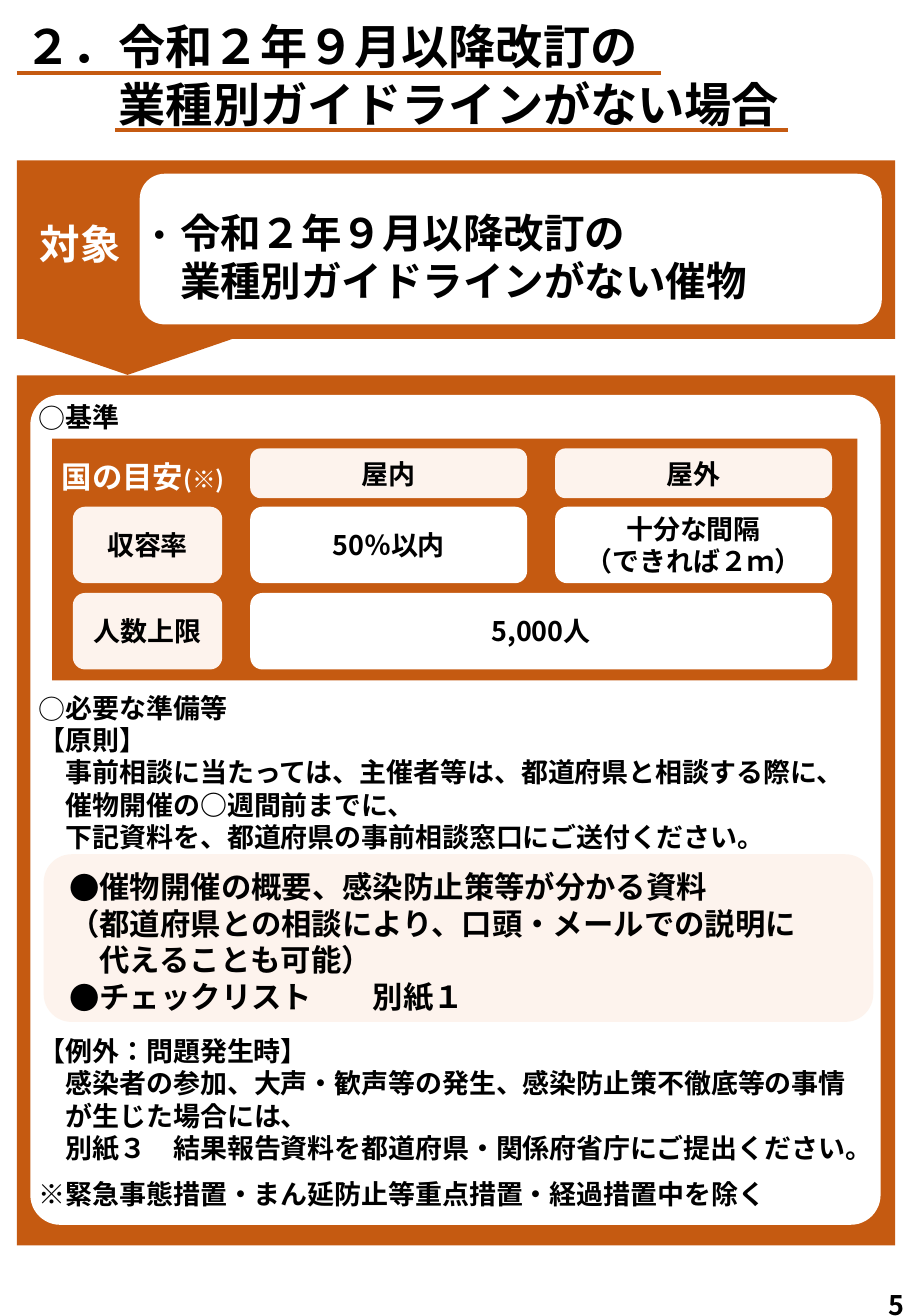
from typing import NamedTuple

from lxml.etree import SubElement
from pptx import Presentation
from pptx.dml.color import RGBColor
from pptx.enum.lang import MSO_LANGUAGE_ID
from pptx.enum.shapes import MSO_CONNECTOR, MSO_SHAPE
from pptx.enum.text import MSO_ANCHOR, MSO_AUTO_SIZE, PP_ALIGN
from pptx.oxml.ns import qn
from pptx.util import Pt

SCALE = 9144  # EMU in one px, 100 px to the inch
FONT = "Noto Sans CJK JP"
ORANGE, CREAM, WHITE, BLACK = "C55A11", "FDF3ED", "FFFFFF", "000000"
PITCH = {14: 19, 16: 19.1, 18: 21.7, 24: 28.4, 28: 34.4}


class Line(NamedTuple):
    """One paragraph; indent counts characters, gap is points above."""
    text: str
    size: int = 16
    indent: int = 0
    gap: int = 0
    mark: str = ""
    tab: int = 0


def px(num):
    return int(num * SCALE)


def color(code):
    return RGBColor.from_string(code)


def style(run, size, ink):
    font = run.font
    font.size, font.bold, font.name = Pt(size), True, FONT
    font.language_id = MSO_LANGUAGE_ID.JAPANESE
    font.color.rgb = color(ink)
    SubElement(font._element, qn("a:ea")).set("typeface", FONT)


def write(shape, lines, ink=BLACK, align=PP_ALIGN.LEFT,
          anchor=MSO_ANCHOR.TOP, pad=(10, 5)):
    frame = shape.text_frame
    frame.text = "\n".join(line.text for line in lines)
    frame.word_wrap, frame.auto_size = True, MSO_AUTO_SIZE.NONE
    frame.vertical_anchor = anchor
    frame.margin_left = frame.margin_right = px(pad[0])
    frame.margin_top = frame.margin_bottom = px(pad[1])
    for para, line in zip(frame.paragraphs, lines):
        para.alignment = align
        para.line_spacing = Pt(PITCH[line.size])
        para.space_before, para.space_after = Pt(line.gap), Pt(0)
        hang = 1 if line.mark else 0
        props = para._p.get_or_add_pPr()
        props.set("marL", str(Pt(line.size * (line.indent + hang))))
        props.set("indent", str(-Pt(line.size * hang)))
        if line.mark:
            SubElement(props, qn("a:buFont")).set("typeface", FONT)
            SubElement(props, qn("a:buChar")).set("char", line.mark)
        else:
            SubElement(props, qn("a:buNone"))
        if line.tab:
            stop = SubElement(SubElement(props, qn("a:tabLst")), qn("a:tab"))
            stop.set("pos", str(px(line.tab)))
            stop.set("algn", "l")
        for run in para.runs:
            style(run, line.size, ink)


def block(slide, kind, box, fill, curve=None):
    shape = slide.shapes.add_shape(kind, *map(px, box))
    shape.shadow.inherit = False
    shape.fill.solid()
    shape.fill.fore_color.rgb = color(fill)
    shape.line.fill.background()
    if curve is not None:
        shape.adjustments[0] = curve
    return shape


def label(slide, box, lines, ink=BLACK):
    shape = slide.shapes.add_textbox(*map(px, box))
    write(shape, lines, ink)
    return shape


def place(holder, box):
    """Move a placeholder to its box and to the front."""
    holder.left, holder.top, holder.width, holder.height = map(px, box)
    holder.element.getparent().append(holder.element)


def rule(slide, left, right, top):
    line = slide.shapes.add_connector(
        MSO_CONNECTOR.STRAIGHT, px(left), px(top), px(right), px(top))
    line.line.color.rgb = color(ORANGE)
    line.line.width = Pt(2.25)
    SubElement(line._element.spPr, qn("a:effectLst"))


def head(slide, box):
    x, y, _, _ = box
    place(slide.shapes.title, box)
    write(slide.shapes.title, [
        Line("２．令和２年９月以降改訂の", 28),
        Line("業種別ガイドラインがない場合", 28, indent=2)])
    rule(slide, x + 4, x + 534, y + 52)
    rule(slide, x + 85, x + 639, y + 99)


def target(slide, box):
    x, y, wide, high = box
    arrow = block(slide, MSO_SHAPE.PENTAGON, (x + 60, y + 55, 62, 181), ORANGE)
    arrow.rotation = 90
    block(slide, MSO_SHAPE.RECTANGLE, box, ORANGE)
    block(slide, MSO_SHAPE.ROUNDED_RECTANGLE,
          (x + 101, y + 11, wide - 112, high - 23), WHITE)
    label(slide, (x + 9, y + 44, 119, 50), [Line("対象", 24)], WHITE)
    label(slide, (x + 91, y + 35, 622, 91), [
        Line("令和２年９月以降改訂の", 24, mark="・"),
        Line("業種別ガイドラインがない催物", 24, indent=1)])


def panel(slide, box):
    x, y, wide, high = box
    block(slide, MSO_SHAPE.RECTANGLE, box, ORANGE)
    block(slide, MSO_SHAPE.ROUNDED_RECTANGLE,
          (x + 11, y + 16, wide - 23, high - 33), WHITE, 0.036)
    block(slide, MSO_SHAPE.ROUNDED_RECTANGLE,
          (x + 22, y + 394, 683, 138), CREAM)
    body = slide.placeholders[1]
    place(body, (x + 8, y + 16, 728, 683))
    write(body, [
        Line("基準", mark="○"),
        Line("必要な準備等", gap=153, mark="○"),
        Line("【原則】"),
        Line("事前相談に当たっては、主催者等は、都道府県と相談する際に、", indent=1),
        Line("催物開催の○週間前までに、", indent=1),
        Line("下記資料を、都道府県の事前相談窓口にご送付ください。", indent=1),
        Line("催物開催の概要、感染防止策等が分かる資料", 18, 1, 9, "●"),
        Line("（都道府県との相談により、口頭・メールでの説明に", 18, 1),
        Line("代えることも可能）", 18, 2),
        Line("チェックリスト\t別紙１", 18, 1, 0, "●", 275),
        Line("【例外：問題発生時】", gap=12),
        Line("感染者の参加、大声・歓声等の発生、感染防止策不徹底等の事情", indent=1),
        Line("が生じた場合には、", indent=1),
        Line("別紙３　結果報告資料を都道府県・関係府省庁にご提出ください。", indent=1),
        Line("※緊急事態措置・まん延防止等重点措置・経過措置中を除く", gap=8)])


def limits(slide, box):
    x, y, _, _ = box
    block(slide, MSO_SHAPE.RECTANGLE, box, ORANGE)
    cols = [(17, 123), (163, 228), (414, 228)]
    rows = [(8, 41), (56, 63), (127, 63)]
    cells = [  # row, first column, last column, words
        (0, 1, 1, "屋内"), (0, 2, 2, "屋外"),
        (1, 0, 0, "収容率"), (1, 1, 1, "50％以内"),
        (1, 2, 2, "十分な間隔\n（できれば２ｍ）"),
        (2, 0, 0, "人数上限"), (2, 1, 2, "5,000人")]
    for row, first, last, words in cells:
        left, (top, high) = cols[first][0], rows[row]
        wide = sum(cols[last]) - left
        fill = CREAM if row == 0 or first == 0 else WHITE
        cell = block(slide, MSO_SHAPE.ROUNDED_RECTANGLE,
                     (x + left, y + top, wide, high), fill,
                     0.21 if row == 0 else 0.16)
        write(cell, [Line(text) for text in words.split("\n")],
              align=PP_ALIGN.CENTER, anchor=MSO_ANCHOR.MIDDLE, pad=(7, 4))
    name = label(slide, (x - 2, y + 11, 179, 40), [Line("国の目安", 18)], WHITE)
    note = name.text_frame.paragraphs[0].add_run()
    note.text = "(※)"
    style(note, 14, WHITE)


def main():
    deck = Presentation()
    deck.slide_width, deck.slide_height = px(750), px(1083)
    slide = deck.slides.add_slide(deck.slide_layouts[1])
    head(slide, (10, 8, 740, 104))
    target(slide, (14, 132, 723, 147))
    panel(slide, (14, 309, 723, 716))
    limits(slide, (43, 361, 663, 199))
    label(slide, (722, 1056, 59, 37), [Line("5")])
    deck.save("out.pptx")


if __name__ == "__main__":
    main()
